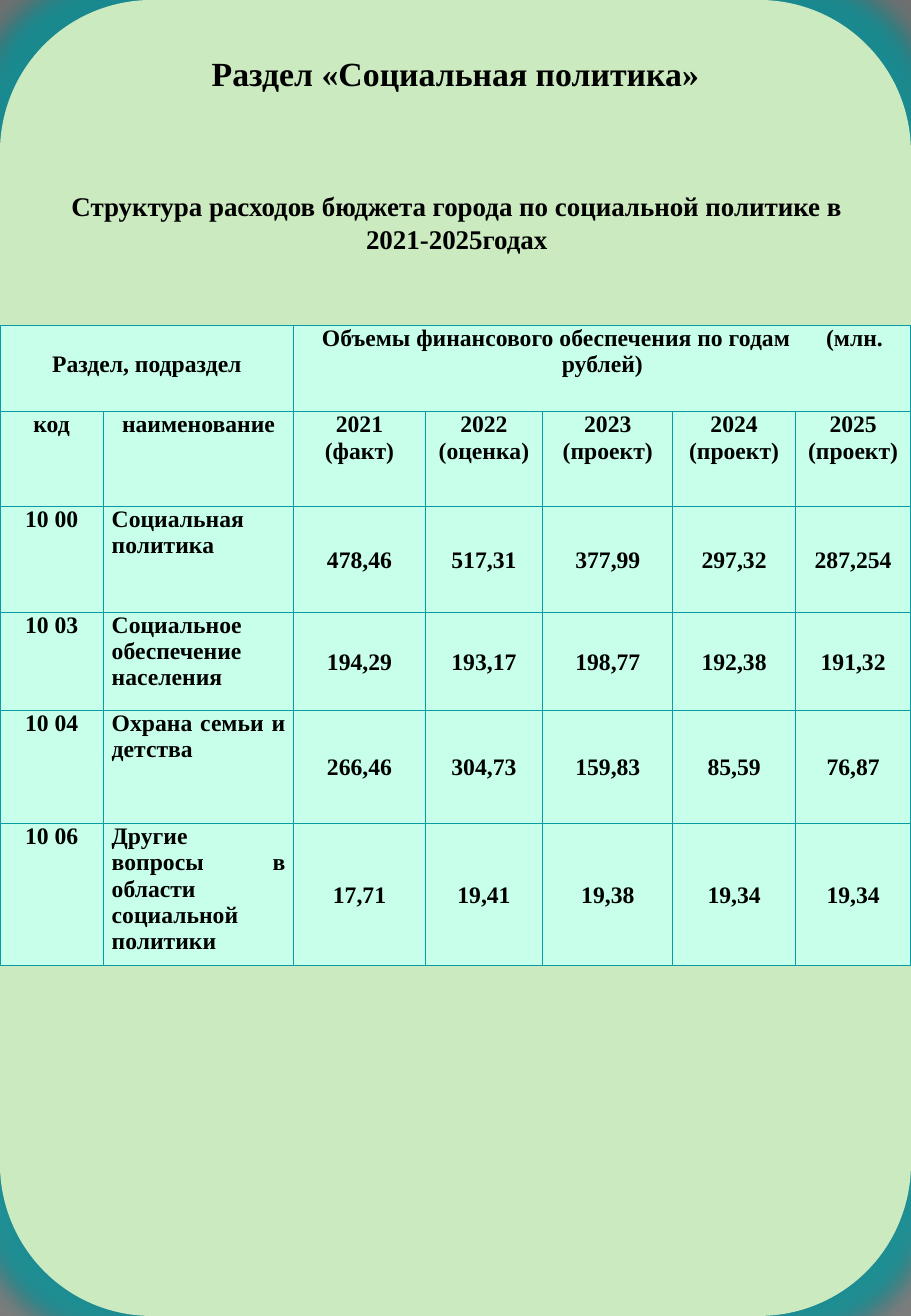
from lxml import etree
from pptx import Presentation
from pptx import oxml, util as u
from pptx.dml.color import RGBColor
from pptx.enum import shapes, text
from pptx.oxml.ns import nsdecls, qn

FONT = "Times New Roman"
PANEL, CELL, TEAL, INK = "CBEAC0", "C7FFEB", "069CA3", "000000"
ALIGN, ANCHOR = text.PP_ALIGN, text.MSO_ANCHOR

COLUMNS = [0.85, 1.57, 1.08, 0.97, 1.07, 1.01, 0.95]
ROWS = [0.71, 0.78, 0.87, 0.81, 0.93, 1.17]
HEADINGS = ["код", "наименование", "2021\n(факт)", "2022\n(оценка)",
            "2023 (проект)", "2024 (проект)", "2025 (проект)"]
SPENDING = [
    ["10 00", "Социальная политика",
     "478,46", "517,31", "377,99", "297,32", "287,254"],
    ["10 03", "Социальное обеспечение населения",
     "194,29", "193,17", "198,77", "192,38", "191,32"],
    ["10 04", "Охрана семьи и детства",
     "266,46", "304,73", "159,83", "85,59", "76,87"],
    ["10 06", "Другие вопросы в области социальной политики",
     "17,71", "19,41", "19,38", "19,34", "19,34"],
]


def color(value):
    return RGBColor.from_string(value)


def inches(box):
    return [u.Inches(length) for length in box]


def style(para, size, align=ALIGN.CENTER):
    para.alignment = align
    para.font.name = FONT
    para.font.size = u.Pt(size)
    para.font.bold = True
    para.font.color.rgb = color(INK)


def set_margins(target, side, top=0):
    target.margin_left = target.margin_right = u.Inches(side)
    target.margin_top, target.margin_bottom = u.Inches(top), 0


def paint_background(page):
    page.background.fill.gradient()
    gradient = next(page.element.iter(qn("a:gradFill")))
    stops = "".join(
        f'<a:gs pos="{place}"><a:srgbClr val="{value}"/></a:gs>'
        for place, value in [(0, "FFFFFF"), (25000, "FFFFFF"), (100000, "707070")])
    gradient.getparent().replace(gradient, oxml.parse_xml(
        f'<a:gradFill {nsdecls("a")} rotWithShape="1"><a:gsLst>{stops}</a:gsLst>'
        '<a:path path="circle"><a:fillToRect l="10000" t="110000" r="10000" '
        'b="100000"/></a:path></a:gradFill>'))


def add_panel(page, box):
    panel = page.shapes.add_shape(
        shapes.MSO_SHAPE.ROUNDED_RECTANGLE, *inches(box))
    panel.fill.solid()
    panel.fill.fore_color.rgb = color(PANEL)
    panel.line.fill.background()
    panel.shadow.inherit = False
    # Teal glow and soft shadow around the rounded corners
    effects = next(panel.element.iter(qn("a:effectLst")))
    glow = etree.SubElement(effects, qn("a:glow"), rad=str(u.Pt(30)))
    shadow = etree.SubElement(effects, qn("a:outerShdw"), blurRad=str(u.Pt(3.5)),
                              dist=str(u.Pt(2.2)), dir="5400000", rotWithShape="0")
    for effect, value, alpha in [(glow, TEAL, "75000"), (shadow, INK, "32000")]:
        tint = etree.SubElement(effect, qn("a:srgbClr"), val=value)
        etree.SubElement(tint, qn("a:alpha"), val=alpha)
    # The panel lies behind the title
    page.shapes.title.element.addprevious(panel.element)


def add_title(page, box):
    title = page.shapes.title
    title.left, title.top, title.width, title.height = inches(box)
    frame = title.text_frame
    frame.text = "Раздел «Социальная политика»"
    frame.vertical_anchor = ANCHOR.MIDDLE
    set_margins(frame, 0)
    style(frame.paragraphs[0], 20)


def add_subtitle(page, box):
    frame = page.shapes.add_textbox(*inches(box)).text_frame
    frame.word_wrap = True
    frame.vertical_anchor = ANCHOR.MIDDLE
    frame.text = ("Структура расходов бюджета города по социальной политике "
                  "в 2021-2025годах")
    style(frame.paragraphs[0], 16)


def add_borders(cell):
    properties = cell._tc.get_or_add_tcPr()
    for index, side in enumerate(("a:lnL", "a:lnR", "a:lnT", "a:lnB")):
        line = etree.Element(qn(side), w=str(u.Pt(0.75)))
        fill = etree.SubElement(line, qn("a:solidFill"))
        etree.SubElement(fill, qn("a:srgbClr"), val=TEAL)
        properties.insert(index, line)


def format_cell(cell, align=ALIGN.CENTER, value=False):
    cell.vertical_anchor = ANCHOR.MIDDLE if value else ANCHOR.TOP
    set_margins(cell, *((0.01, 0.01) if value else (0.07, 0)))
    cell.fill.solid()
    cell.fill.fore_color.rgb = color(CELL)
    add_borders(cell)
    for para in cell.text_frame.paragraphs:
        style(para, 14, align)


def add_spending_table(page, box):
    table = page.shapes.add_table(len(ROWS), len(COLUMNS), *inches(box)).table
    for column, width in zip(table.columns, COLUMNS):
        column.width = u.Inches(width)
    for row, height in zip(table.rows, ROWS):
        row.height = u.Inches(height)

    # Merged heading row
    section, volumes = table.cell(0, 0), table.cell(0, 2)
    section.merge(table.cell(0, 1))
    volumes.merge(table.cell(0, 6))
    section.text = "Раздел, подраздел"
    section.text_frame.paragraphs[0].line_spacing = 2.0
    para = volumes.text_frame.paragraphs[0]
    for words in ("Объемы финансового обеспечения по годам", " ", "(млн. рублей)"):
        span = para.add_run()
        span.text = words
        if words == " ":  # one widened space sets the unit apart
            span._r.get_or_add_rPr().set("spc", "1750")

    # Column headings and figures
    for r, entries in enumerate([HEADINGS] + SPENDING, 1):
        for c, entry in enumerate(entries):
            table.cell(r, c).text = entry
    for r in range(len(ROWS)):
        for c in range(len(COLUMNS)):
            is_name = r > 1 and c == 1
            format_cell(table.cell(r, c),
                        ALIGN.JUSTIFY if is_name else ALIGN.CENTER,
                        value=r > 1 and c > 1)


def build_policy_page(deck):
    page = deck.slides.add_slide(deck.slide_layouts[5])
    paint_background(page)
    add_panel(page, (0, 0, 7.5, 10.83))
    add_title(page, (0.42, 0.42, 6.66, 0.36))
    add_subtitle(page, (0.25, 1.51, 7.02, 0.64))
    add_spending_table(page, (0, 2.68, sum(COLUMNS), sum(ROWS)))


def main():
    deck = Presentation()
    deck.slide_width, deck.slide_height = u.Inches(7.5), u.Inches(10.83)
    build_policy_page(deck)
    deck.save("out.pptx")


if __name__ == "__main__":
    main()
